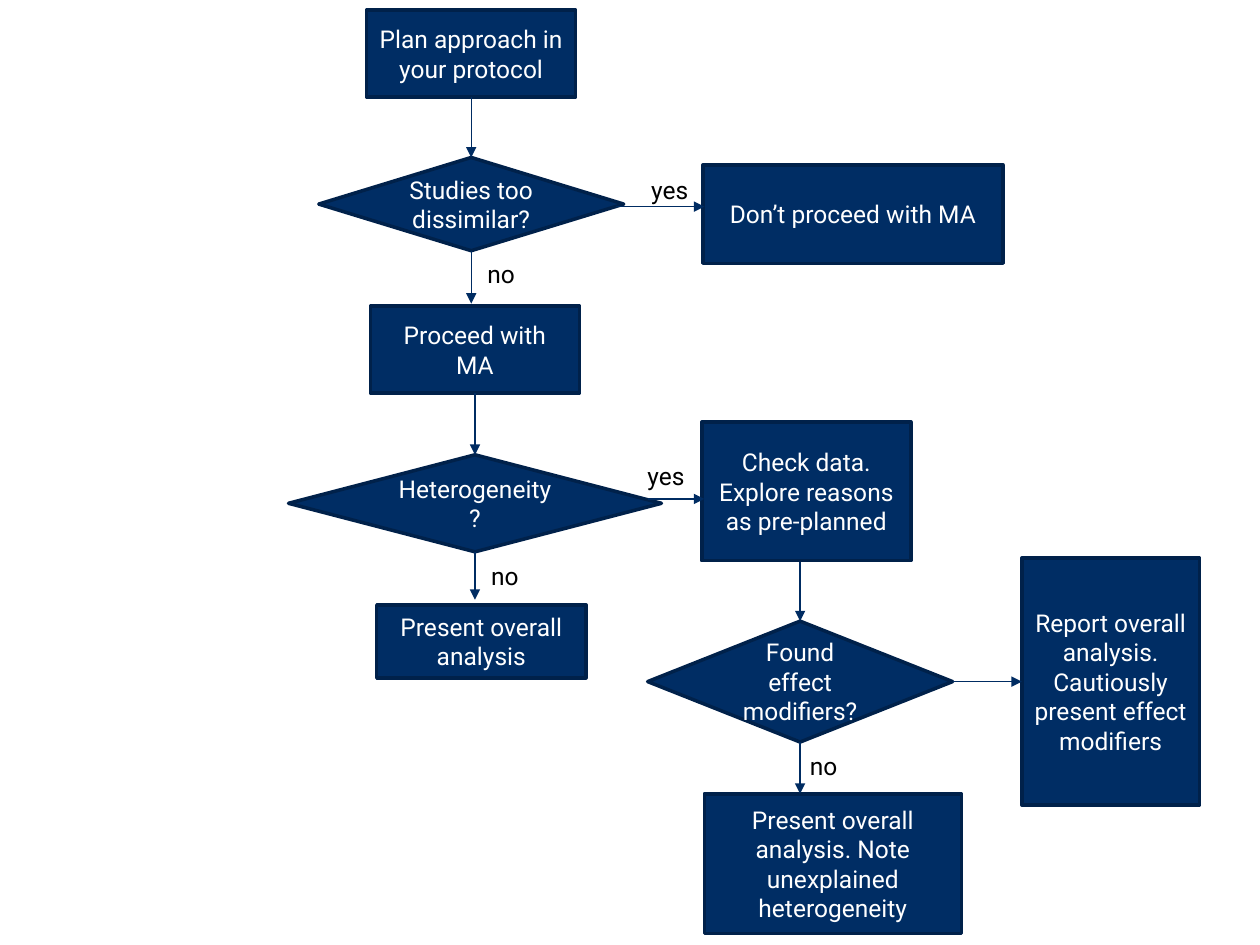
from dataclasses import dataclass
from typing import Any

from lxml.etree import SubElement
from pptx import Presentation
from pptx.dml.color import RGBColor
from pptx.enum.shapes import MSO_CONNECTOR, MSO_SHAPE
from pptx.enum.text import MSO_ANCHOR, MSO_AUTO_SIZE, PP_ALIGN
from pptx.oxml.ns import qn
from pptx.util import Inches, Pt

NAVY = RGBColor(0x00, 0x2D, 0x64)
OUTLINE = RGBColor(0x00, 0x21, 0x4A)
ARROW = RGBColor(0x00, 0x2C, 0x62)
WHITE = RGBColor(0xFF, 0xFF, 0xFF)
BLACK = RGBColor(0x00, 0x00, 0x00)
FONT = "Roboto"
SLIDE_WIDTH, SLIDE_HEIGHT = Inches(10), Inches(7.5)
CELL = SLIDE_WIDTH // 100
PROCESS = MSO_SHAPE.FLOWCHART_PROCESS
DECISION = MSO_SHAPE.FLOWCHART_DECISION
TOP, LEFT, BOTTOM, RIGHT = range(4)


def style_text(frame, text, color, align):
    frame.word_wrap = True
    frame.text = text
    for paragraph in frame.paragraphs:
        paragraph.alignment = align
        for run in paragraph.runs:
            run.font.name = FONT
            run.font.size = Pt(14)
            run.font.color.rgb = color


@dataclass
class Region:
    shapes: Any
    column: float
    row: float

    def point(self, column, row):
        return round((self.column + column) * CELL), round((self.row + row) * CELL)

    def step(self, kind, column, row, columns, rows, text):
        step = self.shapes.add_shape(kind, *self.point(column, row),
                                     round(columns * CELL), round(rows * CELL))
        step.shadow.inherit = False
        step.fill.solid()
        step.fill.fore_color.rgb = NAVY
        step.line.color.rgb = OUTLINE
        step.line.width = Pt(2)
        step.text_frame.vertical_anchor = MSO_ANCHOR.MIDDLE
        style_text(step.text_frame, text, WHITE, PP_ALIGN.CENTER)
        return step

    def answer(self, column, row, columns, text):
        answer = self.shapes.add_textbox(*self.point(column, row),
                                         round(columns * CELL), round(3.4 * CELL))
        style_text(answer.text_frame, text, BLACK, PP_ALIGN.LEFT)
        answer.text_frame.auto_size = MSO_AUTO_SIZE.SHAPE_TO_FIT_TEXT

    def arrow(self, start=(0, 0), end=(0, 0), source=None, target=None):
        arrow = self.shapes.add_connector(MSO_CONNECTOR.STRAIGHT,
                                          *self.point(*start), *self.point(*end))
        if source:
            arrow.begin_connect(*source)
        if target:
            arrow.end_connect(*target)
        arrow.line.color.rgb = ARROW
        arrow.line.width = Pt(0.75)
        SubElement(arrow.line._get_or_add_ln(), qn("a:tailEnd"), type="triangle")
        SubElement(arrow._element.spPr, qn("a:effectLst"))


def add_main_path(region):
    plan = region.step(PROCESS, 6.2, 0, 16.6, 6.9, "Plan approach in your protocol")
    dissimilar = region.step(DECISION, 2.4, 11.7, 24.2, 7.4, "Studies too dissimilar?")
    region.step(PROCESS, 32.9, 12.3, 23.8, 7.8, "Don’t proceed with MA")
    proceed = region.step(PROCESS, 6.5, 23.5, 16.6, 6.9, "Proceed with MA")
    heterogeneity = region.step(DECISION, 0, 35.3, 29.6, 7.7, "Heterogeneity?")
    region.step(PROCESS, 7, 47.2, 16.6, 5.8, "Present overall analysis")

    region.arrow(source=(plan, BOTTOM), target=(dissimilar, TOP))
    region.arrow(start=(26, 15.6), end=(33, 15.6))
    region.arrow(source=(dissimilar, BOTTOM), end=(14.5, 23.3))
    region.arrow(source=(proceed, BOTTOM), target=(heterogeneity, TOP))
    region.arrow(source=(heterogeneity, BOTTOM), end=(14.8, 46.8))

    region.answer(27.8, 12.6, 9.2, "yes")
    region.answer(14.8, 19.3, 5.1, "no")
    region.answer(27.5, 35.3, 9.2, "yes")
    region.answer(15.1, 43.2, 5.1, "no")


def add_heterogeneity_branch(region):
    region.step(PROCESS, 4.3, 0, 16.6, 11, "Check data.\nExplore reasons as pre-planned")
    modifiers = region.step(DECISION, 0, 15.8, 24.2, 9.6, "Found effect modifiers?")
    region.step(PROCESS, 4.5, 29.5, 20.4, 11.1,
                "Present overall analysis. Note unexplained heterogeneity")
    report = region.step(PROCESS, 29.7, 10.8, 14.1, 19.6,
                         "Report overall analysis. Cautiously present effect modifiers")

    region.arrow(start=(0, 6.1), end=(4.5, 6.1))
    region.arrow(start=(12.1, 11.1), target=(modifiers, TOP))
    region.arrow(source=(modifiers, BOTTOM), end=(12.1, 29.5))
    region.arrow(source=(modifiers, RIGHT), target=(report, LEFT))

    region.answer(11.9, 25.6, 5.1, "no")


def main():
    deck = Presentation()
    deck.slide_width, deck.slide_height = SLIDE_WIDTH, SLIDE_HEIGHT
    slide = deck.slides.add_slide(deck.slide_layouts[6])
    add_main_path(Region(slide.shapes, 22.9, 0.8))
    add_heterogeneity_branch(Region(slide.shapes, 51.4, 33.5))
    deck.save("out.pptx")


if __name__ == "__main__":
    main()
